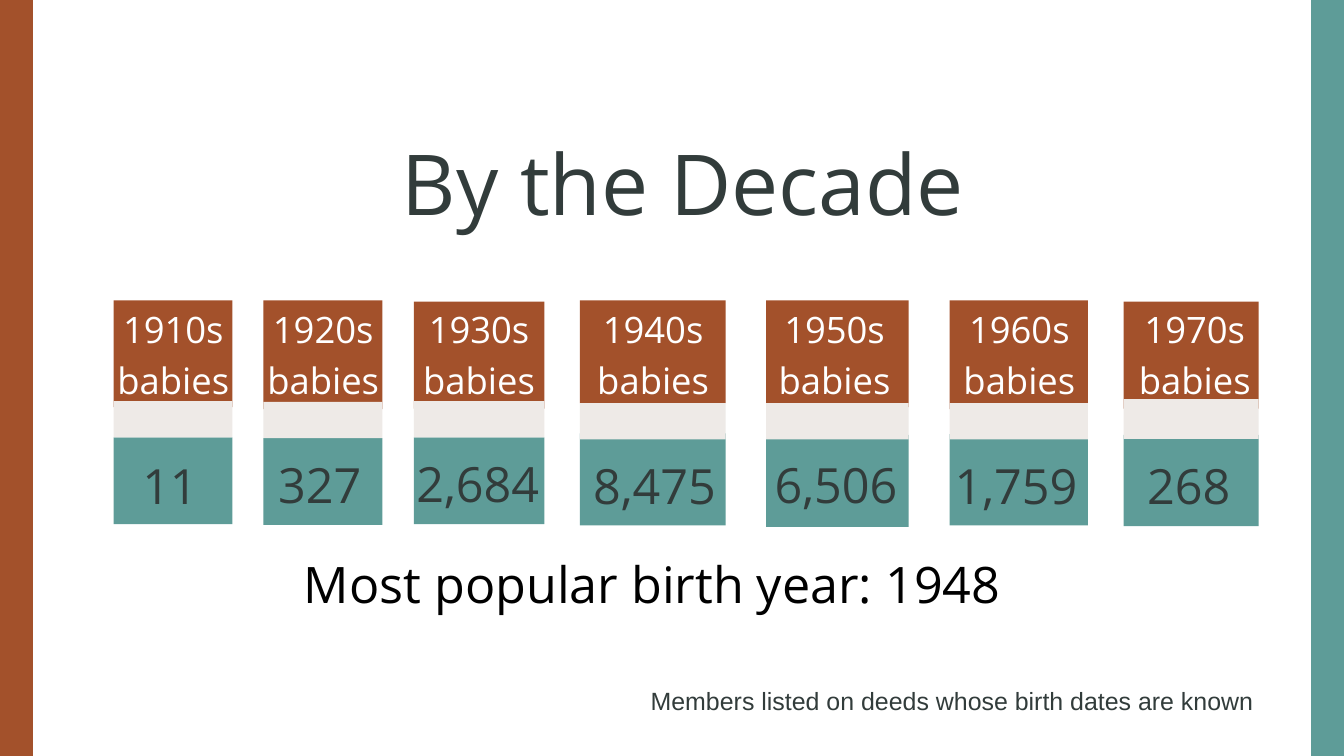
from collections import namedtuple

from pptx import Presentation
from pptx.dml.color import RGBColor
from pptx.enum.shapes import MSO_SHAPE
from pptx.enum.text import MSO_ANCHOR, MSO_AUTO_SIZE, PP_ALIGN
from pptx.util import Inches, Pt

RECT = MSO_SHAPE.RECTANGLE
TOP = MSO_ANCHOR.TOP
NO_FIT = MSO_AUTO_SIZE.NONE
CENTER = PP_ALIGN.CENTER

RUST, TEAL, SAND = "A3512B", "5E9C98", "EEEAE7"
INK, WHITE, BLACK = "323C3B", "FFFFFF", "000000"
SLIDE_W, SLIDE_H, BAR_W = 20, 11.25, 0.49
LABEL_W, COUNT_W = 1.77, 1.93

# Each band is (top, height); label_x and count_x are text centres
Decade = namedtuple(
    "Decade", "name count left width head strip base label_x count_x count_y")
DECADES = [
    Decade("1910s", "11", 1.69, 1.77, (4.47, 1.59), (5.97, 0.54), (6.51, 1.29), 2.58, 2.53, 6.64),
    Decade("1920s", "327", 3.92, 1.77, (4.47, 1.62), (5.98, 0.54), (6.52, 1.29), 4.81, 4.76, 6.62),
    Decade("1930s", "2,684", 6.16, 1.94, (4.49, 1.59), (5.97, 0.54), (6.51, 1.29), 7.13, 7.11, 6.61),
    Decade("1940s", "8,475", 8.63, 2.17, (4.47, 1.53), (6, 0.54), (6.45, 1.37), 9.72, 9.74, 6.64),
    Decade("1950s", "6,506", 11.4, 2.12, (4.47, 1.59), (6, 0.54), (6.47, 1.37), 12.42, 12.44, 6.62),
    Decade("1960s", "1,759", 14.13, 2.06, (4.47, 1.62), (6, 0.54), (6.46, 1.36), 15.17, 15.12, 6.64),
    Decade("1970s", "268", 16.72, 2.01, (4.49, 1.59), (5.94, 0.59), (6.47, 1.36), 17.78, 17.69, 6.64),
]


def rgb(color):
    return RGBColor.from_string(color)


def add_rect(s, left, top, width, height, color):
    sp = s.shapes.add_shape(RECT, Inches(left), Inches(top), Inches(width), Inches(height))
    sp.shadow.inherit = False
    sp.fill.solid()
    sp.fill.fore_color.rgb = rgb(color)
    sp.line.fill.background()


def add_text(s, text, box, size, spacing, color=INK, font="Open Sans", sp=None):
    """Write centred text in a new text box, or in the given placeholder."""
    left, top, width, height = (Inches(v) for v in box)
    if sp is None:
        sp = s.shapes.add_textbox(left, top, width, height)
    else:
        sp.left, sp.top, sp.width, sp.height = left, top, width, height
    tf = sp.text_frame
    tf.word_wrap = True
    tf.auto_size = NO_FIT
    tf.vertical_anchor = TOP
    tf.margin_left = tf.margin_right = tf.margin_top = tf.margin_bottom = 0
    p = tf.paragraphs[0]
    p.alignment = CENTER
    p.line_spacing = Pt(spacing)
    r = p.add_run()
    r.text = text
    r.font.size = Pt(size)
    r.font.name = font
    r.font.color.rgb = rgb(color)


def add_decade(s, d):
    # The strip goes last, over the edges of the other two bands
    for (top, height), color in ((d.head, RUST), (d.base, TEAL), (d.strip, SAND)):
        add_rect(s, d.left, top, d.width, height, color)
    add_text(s, f"{d.name} babies", (d.label_x - LABEL_W / 2, 4.46, LABEL_W, 1.48),
             size=39, spacing=54.6, color=WHITE)
    add_text(s, d.count, (d.count_x - COUNT_W / 2, d.count_y, COUNT_W, 1.02),
             size=52, spacing=72.8)


def main():
    prs = Presentation()
    prs.slide_width, prs.slide_height = Inches(SLIDE_W), Inches(SLIDE_H)
    s = prs.slides.add_slide(prs.slide_layouts[5])

    # Side bars
    add_rect(s, 0, 0, BAR_W, SLIDE_H, RUST)
    add_rect(s, SLIDE_W - BAR_W, 0, BAR_W, SLIDE_H, TEAL)

    # Title
    add_text(s, "By the Decade", (2.99, 1.71, 14.35, 1.68),
             size=90, spacing=126, sp=s.shapes.title)

    # Decade columns
    for d in DECADES:
        add_decade(s, d)

    # Key finding and footnote
    add_text(s, "Most popular birth year: 1948", (4.03, 8.08, 11.36, 1.01),
             size=53.9, spacing=75.5, color=BLACK)
    add_text(s, "Members listed on deeds whose birth dates are known",
             (8.63, 10.13, 11.09, 0.5), size=26.7, spacing=37.4, font="Arial")

    prs.save("out.pptx")


if __name__ == "__main__":
    main()
